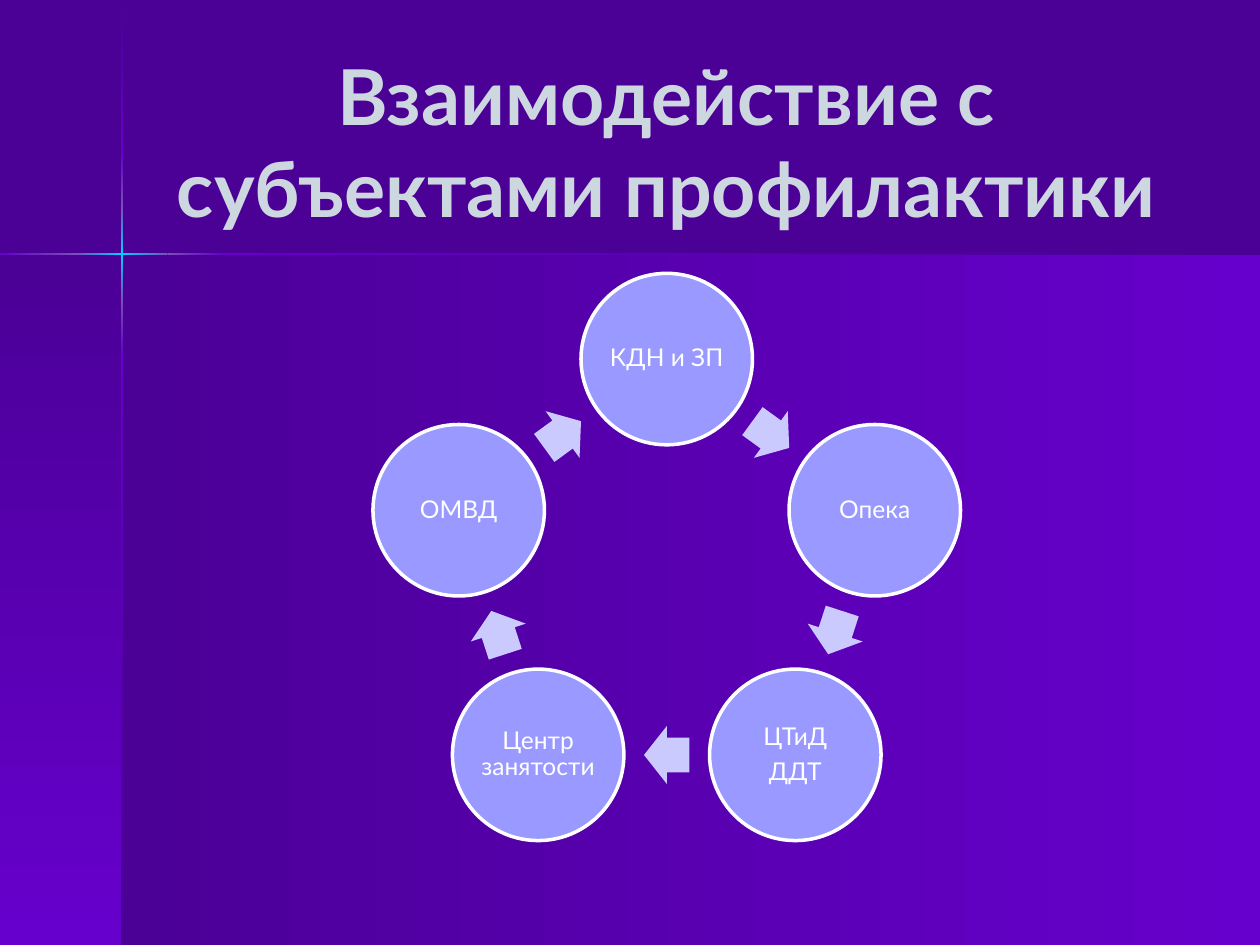
import copy
import math

import pptx
import pptx.dml.color
import pptx.enum.shapes
import pptx.enum.text
import pptx.oxml.ns
import pptx.util

Pt = pptx.util.Pt
MSO_SHAPE = pptx.enum.shapes.MSO_SHAPE
CENTER = pptx.enum.text.PP_ALIGN.CENTER
MIDDLE = pptx.enum.text.MSO_ANCHOR.MIDDLE

COLORS = {
    "dark": "4B0096", "bright": "6600CC", "haze": "7850BA", "glow": "00CCFF",
    "title": "CDD7DF", "node": "9999FF", "arrow": "CACAFF", "white": "FFFFFF",
}
TITLE_FONT = {"name": "Lato", "size": Pt(44), "bold": True}
NODE_FONT = {"name": "Lato", "size": Pt(14), "bold": False}
NODE_PARAGRAPH = {"alignment": CENTER, "line_spacing": 0.9, "space_after": Pt(5)}
NODE_FRAME = {
    "word_wrap": True, "vertical_anchor": MIDDLE,
    "margin_left": Pt(1.4), "margin_right": Pt(1.4),
    "margin_top": Pt(1.4), "margin_bottom": Pt(1.4),
}


def rgb(name):
    return pptx.dml.color.RGBColor.from_string(COLORS[name])


def add_shape(kind, left, top, width, height):
    """Add a preset shape without shadow or outline."""
    sp = s.shapes.add_shape(kind, Pt(left), Pt(top), Pt(width), Pt(height))
    sp.shadow.inherit = False
    sp.line.fill.background()
    return sp


prs = pptx.Presentation()
prs.slide_width, prs.slide_height = Pt(720), Pt(540)
s = prs.slides.add_slide(prs.slide_layouts[5])
s.background.fill.solid()
s.background.fill.fore_color.rgb = rgb("dark")

# Background panels and the glowing cross: box, gradient angle, colours
bands = [
    ((70, 145.5, 650, 394.5), 0, ("dark", "bright")),
    ((0, 145.5, 70, 394.5), 270, ("dark", "bright")),
    ((69.2, 0.7, 1.3, 86.5), 270, ("dark", "bright")),
    ((69.2, 203, 1.3, 337), 270, ("bright", "dark")),
    ((127.5, 144.6, 592.5, 1.3), 0, ("bright", "dark")),
    ((69.2, 171.4, 1.3, 31.6), 270, ("haze", "bright")),
    ((69.2, 87.2, 1.3, 31.6), 270, ("bright", "haze")),
    ((69.2, 118.8, 1.3, 52.6), 270, ("haze", "glow", "haze")),
    ((0, 144.6, 43.5, 1.3), 0, ("bright", "haze")),
    ((95.9, 144.6, 31.6, 1.3), 0, ("haze", "bright")),
    ((43.4, 144.6, 52.5, 1.3), 0, ("haze", "glow", "haze")),
]
for box, angle, names in bands:
    sp = add_shape(MSO_SHAPE.RECTANGLE, *box)
    sp.fill.gradient()
    sp.fill.gradient_angle = angle
    stops = sp._element.find(".//" + pptx.oxml.ns.qn("a:gsLst"))
    while len(stops) < len(names):
        stops.append(copy.deepcopy(stops[0]))
    for i, (stop, name) in enumerate(zip(sp.fill.gradient_stops, names)):
        stop.position = i / (len(names) - 1)
        stop.color.rgb = rgb(name)

title = s.shapes.title
title.left, title.top, title.width, title.height = Pt(84), Pt(24), Pt(594), Pt(113)
tf = title.text_frame
tf.text = "Взаимодействие с субъектами профилактики"
tf.word_wrap = True
tf.vertical_anchor = MIDDLE
p = tf.paragraphs[0]
p.alignment = CENTER
r = p.runs[0]
for key, value in TITLE_FONT.items():
    setattr(r.font, key, value)
r.font.color.rgb = rgb("title")

# Cycle: nodes every 72 degrees clockwise from the top, an arrow halfway between
CENTER_X, CENTER_Y = 381, 330.2
NODE_RADIUS, NODE_SIZE = 125, 98
ARROW_RADIUS, ARROW_W, ARROW_H = 101.2, 26, 33
nodes = ["КДН и ЗП", "Опека", "ЦТиД\nДДТ", "Центр занятости", "ОМВД"]
step = 360 / len(nodes)
for i, text in enumerate(nodes):
    angle = math.radians(i * step)
    sp = add_shape(MSO_SHAPE.OVAL,
                   CENTER_X + NODE_RADIUS * math.sin(angle) - NODE_SIZE / 2,
                   CENTER_Y - NODE_RADIUS * math.cos(angle) - NODE_SIZE / 2,
                   NODE_SIZE, NODE_SIZE)
    sp.fill.solid()
    sp.fill.fore_color.rgb = rgb("node")
    sp.line.color.rgb = rgb("white")
    sp.line.width = Pt(2)
    tf = sp.text_frame
    tf.text = text
    for key, value in NODE_FRAME.items():
        setattr(tf, key, value)
    for p in tf.paragraphs:
        for key, value in NODE_PARAGRAPH.items():
            setattr(p, key, value)
        r = p.runs[0]
        for key, value in NODE_FONT.items():
            setattr(r.font, key, value)
        r.font.color.rgb = rgb("white")

    turn = (i + 0.5) * step
    angle = math.radians(turn)
    sp = add_shape(MSO_SHAPE.RIGHT_ARROW,
                   CENTER_X + ARROW_RADIUS * math.sin(angle) - ARROW_W / 2,
                   CENTER_Y - ARROW_RADIUS * math.cos(angle) - ARROW_H / 2,
                   ARROW_W, ARROW_H)
    sp.rotation = turn
    sp.adjustments[0], sp.adjustments[1] = 0.6, 0.5
    sp.fill.solid()
    sp.fill.fore_color.rgb = rgb("arrow")

prs.save("out.pptx")
